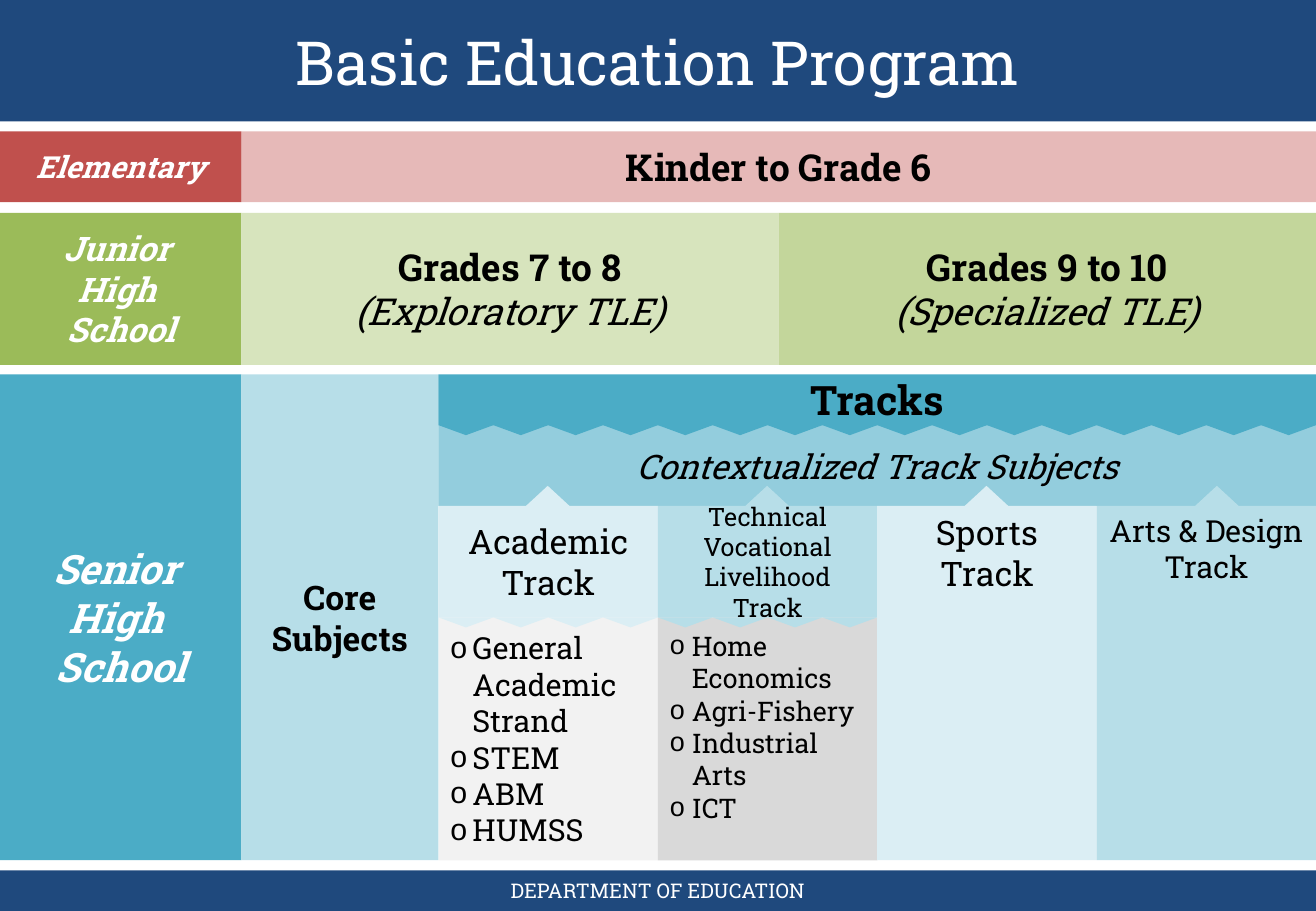
import pptx
import pptx.dml.color
import pptx.enum.shapes
import pptx.enum.text
import pptx.oxml
import pptx.oxml.ns
import pptx.util
from pptx.util import Cm

FONT = "Roboto Slab"
BLACK, WHITE, NAVY = "000000", "FFFFFF", "1F497D"
TEAL, TEAL_MID, TEAL_LIGHT, TEAL_PALE = "4BACC6", "93CDDD", "B7DEE8", "DBEEF4"

WIDTH, HEIGHT = 27.52, 19.05
LABEL_WIDTH = 5.05
TRACKS_LEFT = 9.17
TRACK_WIDTH = (WIDTH - TRACKS_LEFT) / 4
GRADES_WIDTH = (WIDTH - LABEL_WIDTH) / 2
TOOTH_WIDTH, TOOTH_HEIGHT = TRACK_WIDTH / 4, 0.21
ARROW_WIDTH, ARROW_HEIGHT = 0.91, 0.42

ELEMENTARY_TOP, ELEMENTARY_HEIGHT = 2.75, 1.48
JUNIOR_TOP, JUNIOR_HEIGHT = 4.45, 3.18
SENIOR_TOP, SENIOR_BOTTOM = 7.83, 17.99
SENIOR_HEIGHT = SENIOR_BOTTOM - SENIOR_TOP
SUBJECTS_TOP, TRACKS_TOP, STRANDS_TOP = 8.89, 10.58, 12.91
FOOTER_TOP, FOOTER_HEIGHT = 18.2, 0.85

MIDDLE = pptx.enum.text.MSO_ANCHOR.MIDDLE
TOP = pptx.enum.text.MSO_ANCHOR.TOP
CENTER = pptx.enum.text.PP_ALIGN.CENTER
LEFT = pptx.enum.text.PP_ALIGN.LEFT
RECTANGLE = pptx.enum.shapes.MSO_SHAPE.RECTANGLE
TRIANGLE = pptx.enum.shapes.MSO_SHAPE.ISOSCELES_TRIANGLE


def color(hex_string):
    return pptx.dml.color.RGBColor.from_string(hex_string)


def fill_shape(shape, fill):
    shape.fill.solid()
    shape.fill.fore_color.rgb = color(fill)


def place(shape, left, top, width, height):
    shape.left, shape.top = Cm(left), Cm(top)
    shape.width, shape.height = Cm(width), Cm(height)


def write(shape, text, size, font_color=BLACK, styles=("",), anchor=MIDDLE, align=CENTER):
    """Set the text; styles holds "b" and "i" flags by paragraph, the last one repeating."""
    text_frame = shape.text_frame
    text_frame.text = text
    text_frame.word_wrap = True
    text_frame.auto_size = pptx.enum.text.MSO_AUTO_SIZE.NONE
    text_frame.vertical_anchor = anchor
    for index, paragraph in enumerate(text_frame.paragraphs):
        style = styles[min(index, len(styles) - 1)]
        paragraph.alignment = align
        paragraph.space_before = pptx.util.Pt(0)
        for run in paragraph.runs:
            run.font.name = FONT
            run.font.size = pptx.util.Pt(size)
            run.font.color.rgb = color(font_color)
            run.font.bold = "b" in style
            run.font.italic = "i" in style


def add_shape(slide, kind, left, top, width, height, fill):
    shape = slide.shapes.add_shape(kind, Cm(left), Cm(top), Cm(width), Cm(height))
    shape.shadow.inherit = False
    fill_shape(shape, fill)
    shape.line.fill.background()
    return shape


def add_block(slide, left, top, width, height, fill, text="", size=18, **text_options):
    block = add_shape(slide, RECTANGLE, left, top, width, height, fill)
    if text:
        write(block, text, size, **text_options)


def add_teeth(slide, left, top, count, fill):
    """Draw a row of downward triangles."""
    for index in range(count):
        tooth = add_shape(slide, TRIANGLE, left + index * TOOTH_WIDTH, top,
                          TOOTH_WIDTH, TOOTH_HEIGHT, fill)
        tooth.rotation = 180


def fill_title(slide, text):
    add_block(slide, 0, 0, WIDTH, 2.54, NAVY)
    title = slide.shapes.title
    place(title, 1.38, 0, WIDTH - 2 * 1.38, 2.54)
    write(title, text, 36, font_color=WHITE)
    title.element.getparent().append(title.element)


def fill_list(placeholder, left, fill, items, size):
    place(placeholder, left, STRANDS_TOP, TRACK_WIDTH, SENIOR_BOTTOM - STRANDS_TOP)
    fill_shape(placeholder, fill)
    write(placeholder, "\n".join(items), size, anchor=TOP, align=LEFT)
    text_frame = placeholder.text_frame
    text_frame.margin_left = text_frame.margin_right = Cm(0.25)
    text_frame.margin_top = text_frame.margin_bottom = Cm(0.25)
    for paragraph in text_frame.paragraphs:
        properties = paragraph._p.get_or_add_pPr()
        properties.set("marL", str(Cm(0.46)))
        properties.set("indent", str(-Cm(0.46)))
        bullet = pptx.oxml.parse_xml(
            f'<a:buChar {pptx.oxml.ns.nsdecls("a")} char="o"/>')
        properties.append(bullet)


def add_footer(slide, text):
    add_block(slide, 0, FOOTER_TOP, WIDTH, FOOTER_HEIGHT, NAVY)
    footer = slide.shapes.add_textbox(
        Cm(1.38), Cm(FOOTER_TOP), Cm(WIDTH - 2 * 1.38), Cm(FOOTER_HEIGHT))
    write(footer, text, 12, font_color=WHITE)


def add_elementary(slide):
    add_block(slide, LABEL_WIDTH, ELEMENTARY_TOP, WIDTH - LABEL_WIDTH, ELEMENTARY_HEIGHT,
              "E6B9B8", "Kinder to Grade 6", 22, styles=("b",))
    add_block(slide, 0, ELEMENTARY_TOP, LABEL_WIDTH, ELEMENTARY_HEIGHT, "C0504D",
              "Elementary", 18, font_color=WHITE, styles=("bi",))


def add_junior_high(slide):
    add_block(slide, 0, JUNIOR_TOP, LABEL_WIDTH, JUNIOR_HEIGHT, "9BBB59",
              "Junior \nHigh \nSchool", 20, font_color=WHITE, styles=("bi",))
    grades = [("D7E4BD", "Grades 7 to 8\n(Exploratory TLE)"),
              ("C3D69B", "Grades 9 to 10\n(Specialized TLE)")]
    for index, (fill, text) in enumerate(grades):
        add_block(slide, LABEL_WIDTH + index * GRADES_WIDTH, JUNIOR_TOP, GRADES_WIDTH,
                  JUNIOR_HEIGHT, fill, text, 22, styles=("b", "i"))


def add_senior_high(slide):
    add_block(slide, 0, SENIOR_TOP, LABEL_WIDTH, SENIOR_HEIGHT, TEAL,
              "Senior \nHigh \nSchool", 24, font_color=WHITE, styles=("bi",))
    add_block(slide, LABEL_WIDTH, SENIOR_TOP, TRACKS_LEFT - LABEL_WIDTH, SENIOR_HEIGHT,
              TEAL_LIGHT, "Core Subjects", 20, styles=("b",))
    tracks_width = WIDTH - TRACKS_LEFT
    add_block(slide, TRACKS_LEFT, SUBJECTS_TOP, tracks_width, TRACKS_TOP - SUBJECTS_TOP,
              TEAL_MID, "Contextualized Track Subjects", 20, styles=("i",))
    add_teeth(slide, TRACKS_LEFT, SUBJECTS_TOP, 16, TEAL)
    add_block(slide, TRACKS_LEFT, SENIOR_TOP, tracks_width, SUBJECTS_TOP - SENIOR_TOP,
              TEAL, "Tracks", 24, styles=("b",))


def add_tracks(slide):
    strands = [
        ("F2F2F2", 18, ["General Academic Strand", "STEM", "ABM", "HUMSS"]),
        ("D9D9D9", 16, ["Home Economics", "Agri-Fishery", "Industrial Arts", "ICT"]),
    ]
    tracks = [
        ("Academic Track", 20, TEAL_PALE, 1.83),
        ("Technical Vocational Livelihood Track", 15, TEAL_LIGHT, 1.83),
        ("Sports Track", 20, TEAL_PALE, 1.83),
        ("Arts & Design Track", 18, TEAL_LIGHT, 2.06),
    ]
    for index, (name, size, fill, arrow_offset) in enumerate(tracks):
        left = TRACKS_LEFT + index * TRACK_WIDTH
        has_strands = index < len(strands)
        bottom = STRANDS_TOP if has_strands else SENIOR_BOTTOM
        add_block(slide, left, TRACKS_TOP, TRACK_WIDTH, bottom - TRACKS_TOP, fill,
                  name, size, anchor=MIDDLE if has_strands else TOP)
        add_shape(slide, TRIANGLE, left + arrow_offset, TRACKS_TOP - ARROW_HEIGHT,
                  ARROW_WIDTH, ARROW_HEIGHT, fill)
        if has_strands:
            list_fill, list_size, items = strands[index]
            fill_list(slide.placeholders[index + 1], left, list_fill, items, list_size)
            add_teeth(slide, left, STRANDS_TOP, 4, fill)


def main():
    presentation = pptx.Presentation()
    presentation.slide_width, presentation.slide_height = Cm(WIDTH), Cm(HEIGHT)
    two_content_layout = presentation.slide_layouts[3]
    slide = presentation.slides.add_slide(two_content_layout)
    fill_title(slide, "Basic Education Program")
    add_elementary(slide)
    add_junior_high(slide)
    add_senior_high(slide)
    add_tracks(slide)
    add_footer(slide, "DEPARTMENT OF EDUCATION")
    presentation.save("out.pptx")


if __name__ == "__main__":
    main()
